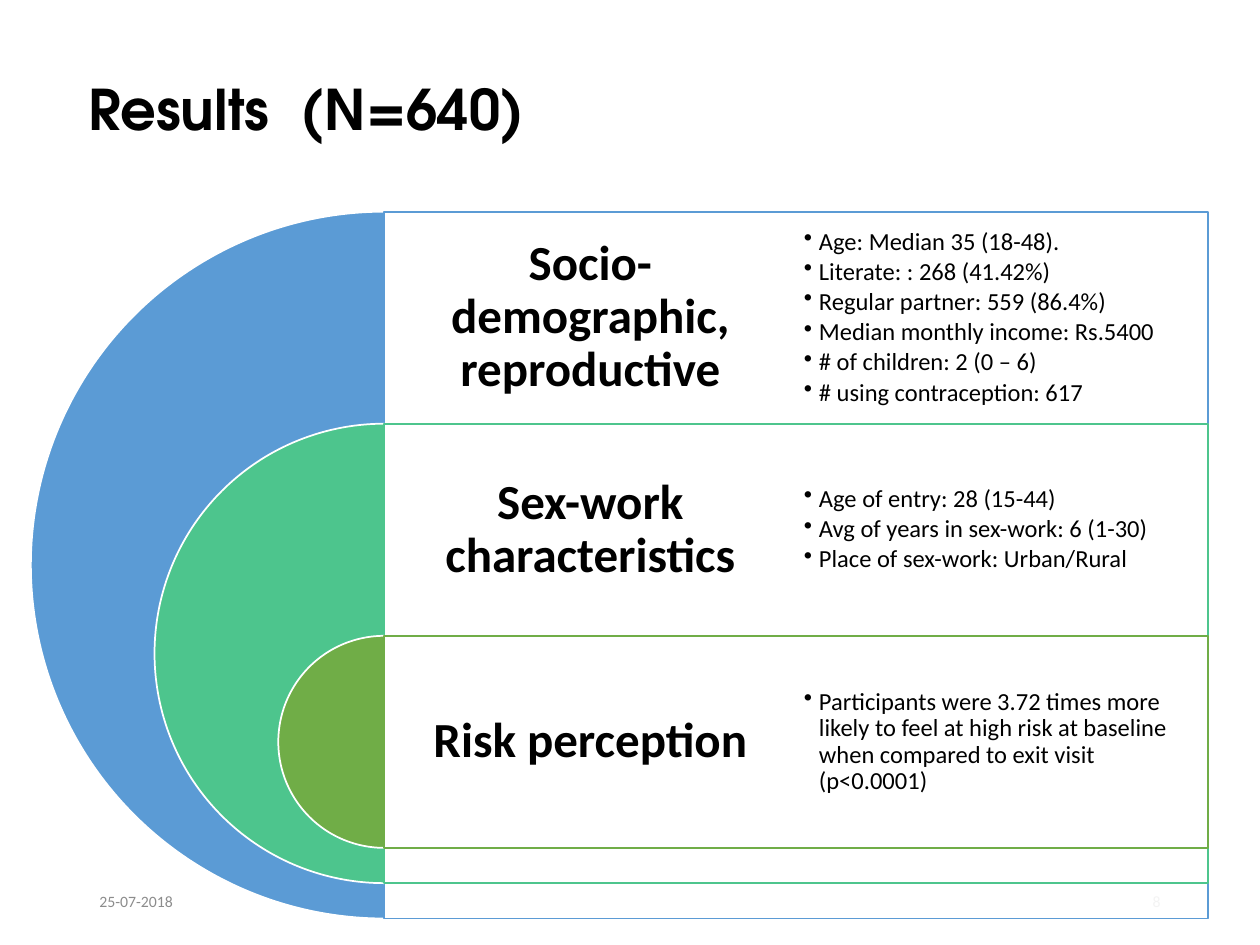
import dataclasses
import typing

import lxml.etree
import pptx
import pptx.dml.color
import pptx.enum.shapes
import pptx.enum.text
import pptx.oxml.ns
import pptx.shapes.autoshape
import pptx.util

Inches = pptx.util.Inches
Pt = pptx.util.Pt
Align = pptx.enum.text.PP_ALIGN
Preset = pptx.enum.shapes.MSO_SHAPE
qn = pptx.oxml.ns.qn


@dataclasses.dataclass(frozen=True)
class Style:
    font: str
    size: float
    color: str
    bold: bool = False
    align: Align = Align.LEFT
    spacing: float = 1.0
    after: float = 0
    bullet_indent: float = 0


@dataclasses.dataclass(frozen=True)
class Theme:
    white: str = "FFFFFF"
    panel_opacity: int = 90
    outline: float = 1
    title: Style = Style("TeX Gyre Adventor", 32, "000000", bold=True, spacing=0.9)
    footer: Style = Style("Calibri", 9, "8C8C8C")
    page: Style = Style("Calibri", 9, "8C8C8C", align=Align.RIGHT)
    heading: Style = Style("Calibri", 28, "000000", bold=True, align=Align.CENTER,
                           spacing=0.9, after=9.8)
    detail: Style = Style("Calibri", 14, "000000", spacing=0.9, after=2.1,
                          bullet_indent=0.12)


class Box(typing.NamedTuple):
    left: float
    top: float
    width: float
    height: float

    def lengths(self) -> list[pptx.util.Length]:
        return [Inches(value) for value in self]


class Topic(typing.NamedTuple):
    heading: str
    color: str
    scale: float
    details: tuple[str, ...]


THEME = Theme()
AXIS = 3.05
TOP = 1.68
DIAMETER = 5.61
ROW = DIAMETER * 0.3
COLUMN = 3.27

TOPICS = (
    Topic("Socio-demographic, reproductive", "5B9BD5", 1, (
        "Age: Median 35 (18-48).",
        "Literate: : 268 (41.42%)",
        "Regular partner: 559 (86.4%)",
        "Median monthly income: Rs.5400",
        "# of children: 2 (0 – 6)",
        "# using contraception: 617",
    )),
    Topic("Sex-work characteristics", "4DC58D", 0.65, (
        "Age of entry: 28 (15-44)",
        "Avg of years in sex-work: 6 (1-30)",
        "Place of sex-work: Urban/Rural",
    )),
    Topic("Risk perception", "70AD47", 0.3, (
        "Participants were 3.72 times more likely to feel at high risk at baseline "
        "when compared to exit visit (p<0.0001)",
    )),
)


def rgb(color: str) -> pptx.dml.color.RGBColor:
    return pptx.dml.color.RGBColor.from_string(color)


def add_bullet(paragraph, indent: float) -> None:
    properties = paragraph._p.get_or_add_pPr()
    properties.set("marL", str(Inches(indent)))
    properties.set("indent", str(-Inches(indent)))
    lxml.etree.SubElement(properties, qn("a:buChar")).set("char", "•")


def add_text(slide, box: Box, lines: tuple[str, ...], style: Style,
             inset: tuple[float, float] = (0.1, 0.05)) -> None:
    frame = slide.shapes.add_textbox(*box.lengths()).text_frame
    frame.word_wrap = True
    frame.vertical_anchor = pptx.enum.text.MSO_ANCHOR.MIDDLE
    frame.margin_left = frame.margin_right = Inches(inset[0])
    frame.margin_top = frame.margin_bottom = Inches(inset[1])
    for index, line in enumerate(lines):
        paragraph = frame.add_paragraph() if index else frame.paragraphs[0]
        paragraph.alignment = style.align
        paragraph.line_spacing = style.spacing
        paragraph.space_after = Pt(style.after)
        if style.bullet_indent:
            add_bullet(paragraph, style.bullet_indent)
        run = paragraph.add_run()
        run.text = line
        run.font.name = style.font
        run.font.size = Pt(style.size)
        run.font.bold = style.bold
        run.font.color.rgb = rgb(style.color)


def add_outlined(slide, preset: Preset, box: Box, fill: str,
                 line: str) -> pptx.shapes.autoshape.Shape:
    shape = slide.shapes.add_shape(preset, *box.lengths())
    shape.shadow.inherit = False
    shape.fill.solid()
    shape.fill.fore_color.rgb = rgb(fill)
    shape.line.color.rgb = rgb(line)
    shape.line.width = Pt(THEME.outline)
    return shape


def add_topic(slide, topic: Topic, top: float) -> None:
    diameter = DIAMETER * topic.scale
    half_disc = add_outlined(slide, Preset.PIE,
                             Box(AXIS - diameter / 2, top, diameter, diameter),
                             topic.color, THEME.white)
    half_disc.adjustments[0] = 54
    half_disc.adjustments[1] = 162
    panel = add_outlined(slide, Preset.RECTANGLE,
                         Box(AXIS, top, 2 * COLUMN, diameter),
                         THEME.white, topic.color)
    panel_color = panel._element.spPr.find(qn("a:solidFill"))[0]
    lxml.etree.SubElement(panel_color, qn("a:alpha")).set(
        "val", str(THEME.panel_opacity * 1000))
    add_text(slide, Box(AXIS, top, COLUMN, ROW), (topic.heading,),
             THEME.heading, (0.12, 0.12))


def main() -> None:
    deck = pptx.Presentation()
    deck.slide_width = Inches(10)
    deck.slide_height = Inches(7.5)
    slide = deck.slides.add_slide(deck.slide_layouts[6])

    add_text(slide, Box(0.6, 0.17, 8.62, 1.45), ("Results  (N=640)",), THEME.title)
    add_text(slide, Box(0.69, 6.95, 2.25, 0.4), ("25-07-2018",), THEME.footer)
    add_text(slide, Box(7.06, 6.95, 2.25, 0.4), ("8",), THEME.page)

    tops = [TOP + index * ROW for index in range(len(TOPICS))]
    for topic, top in zip(TOPICS, tops):
        add_topic(slide, topic, top)
    for topic, top in zip(TOPICS, tops):
        add_text(slide, Box(AXIS + COLUMN, top, COLUMN, ROW), topic.details,
                 THEME.detail, (0.06, 0.06))

    deck.save("out.pptx")


if __name__ == "__main__":
    main()
